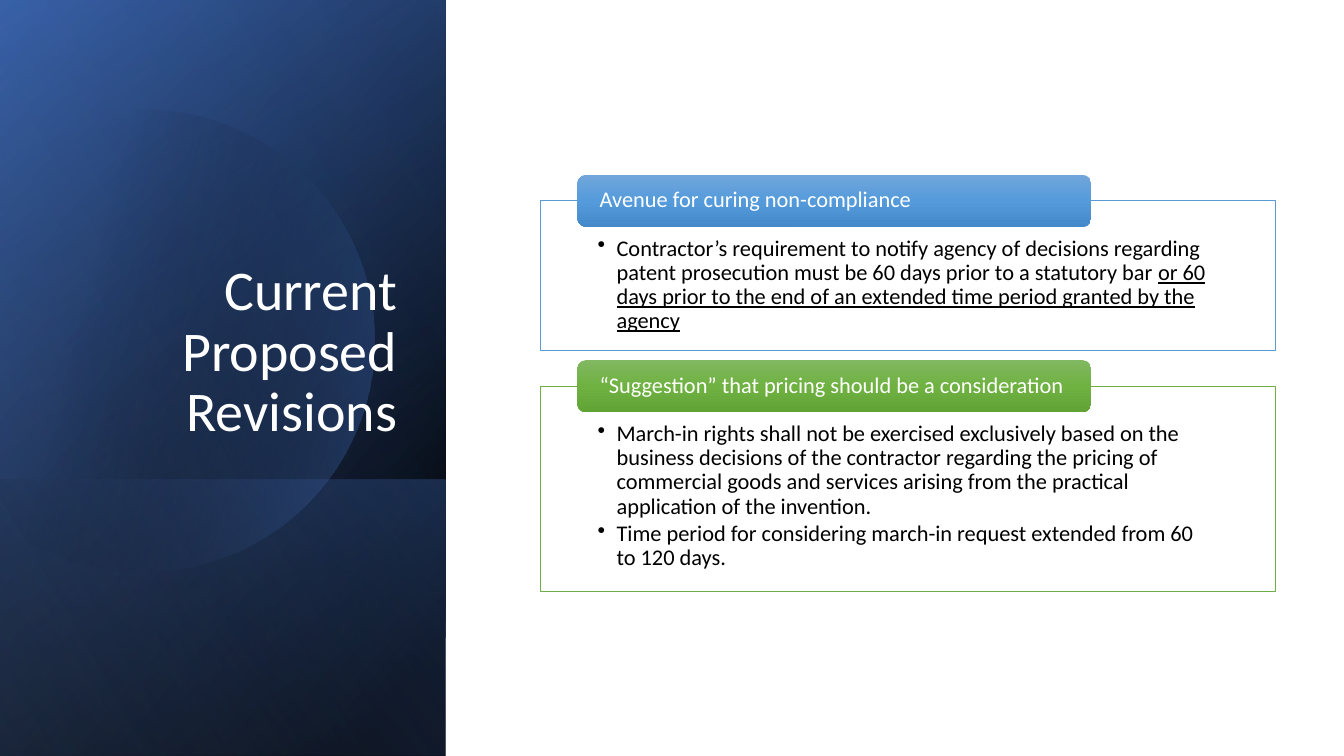
import dataclasses
import math

import pptx
import pptx.dml.color
import pptx.enum.shapes
import pptx.enum.text
import pptx.oxml
import pptx.oxml.ns
import pptx.shapes.autoshape
import pptx.slide
import pptx.text.text
import pptx.util

Cm = pptx.util.Cm
Pt = pptx.util.Pt
SHAPES = pptx.enum.shapes.MSO_SHAPE
ANCHORS = pptx.enum.text.MSO_ANCHOR

FONT = "Calibri"
COLORS = {
    "white": "FFFFFF",
    "black": "000000",
    "navy": "2F5597",
    "royal": "4472C4",
    "pale": "8FAADC",
    "blue": "5B9BD5",
    "green": "70AD47",
    "blue_top": "71A6DB",
    "blue_middle": "559BDB",
    "blue_bottom": "448ACA",
    "green_top": "81B861",
    "green_middle": "6FB242",
    "green_bottom": "62A336",
}


@dataclasses.dataclass(frozen=True)
class Stop:
    position: int
    color: str
    opacity: int = 100


@dataclasses.dataclass(frozen=True)
class Layer:
    top: float
    height: float
    angle: int
    stops: tuple[Stop, ...]


@dataclasses.dataclass(frozen=True)
class Span:
    text: str
    underlined: bool = False


@dataclasses.dataclass(frozen=True)
class Card:
    top: float
    height: float
    color: str
    heading: str
    points: tuple[tuple[Span, ...], ...]


SLIDE_WIDTH, SLIDE_HEIGHT = 33.87, 19.05
PANEL_WIDTH = 11.23
LOWER_HEIGHT = 6.96
LOWER_TOP = SLIDE_HEIGHT - LOWER_HEIGHT
CIRCLE_X, CIRCLE_Y, CIRCLE_RADIUS, CIRCLE_CUT = 3.61, 8.58, 5.82, -0.38
CARD_LEFT, CARD_WIDTH = 13.61, 18.52
HEADING_LEFT, HEADING_WIDTH, HEADING_HEIGHT = 14.55, 12.95, 1.31

BACK_LAYERS = (
    Layer(0, SLIDE_HEIGHT, 50, (Stop(8, "black"), Stop(100, "navy"))),
    Layer(0, SLIDE_HEIGHT, 30, (Stop(0, "black", 0), Stop(99, "royal", 46))),
    Layer(LOWER_TOP, LOWER_HEIGHT, 130, (Stop(2, "royal", 29), Stop(100, "black", 30))),
)
CIRCLE_STOPS = (Stop(29, "black", 0), Stop(100, "royal", 43))
FRONT_LAYER = Layer(0, SLIDE_HEIGHT, 120, (Stop(0, "black", 0), Stop(99, "pale", 11)))

CARDS = (
    Card(5.06, 3.78, "blue", "Avenue for curing non-compliance", (
        (
            Span("Contractor’s requirement to notify agency of decisions regarding patent "
                 "prosecution must be 60 days prior to a statutory bar "),
            Span("or 60 days prior to the end of an extended time period granted by the agency", True),
        ),
    )),
    Card(9.73, 5.18, "green", "“Suggestion” that pricing should be a consideration", (
        (Span("March-in rights shall not be exercised exclusively based on the business decisions "
              "of the contractor regarding the pricing of commercial goods and services arising "
              "from the practical application of the invention."),),
        (Span("Time period for considering march-in request extended from 60 to 120 days."),),
    )),
)


def rgb(name: str) -> pptx.dml.color.RGBColor:
    return pptx.dml.color.RGBColor.from_string(COLORS[name])


def paint_gradient(shape: pptx.shapes.autoshape.Shape, stops: tuple[Stop, ...], angle: int) -> None:
    shape.shadow.inherit = False
    shape.line.fill.background()
    shape.fill.background()
    stop_xml = "".join(
        f'<a:gs pos="{stop.position * 1000}"><a:srgbClr val="{COLORS[stop.color]}">'
        f'<a:alpha val="{stop.opacity * 1000}"/></a:srgbClr></a:gs>'
        for stop in stops
    )
    gradient = pptx.oxml.parse_xml(
        f'<a:gradFill {pptx.oxml.ns.nsdecls("a")} rotWithShape="1"><a:gsLst>{stop_xml}</a:gsLst>'
        f'<a:lin ang="{angle * 60000}" scaled="0"/></a:gradFill>'
    )
    properties = shape._element.spPr
    properties.replace(properties.find(pptx.oxml.ns.qn("a:noFill")), gradient)


def draw_layer(page: pptx.slide.Slide, layer: Layer) -> None:
    shift = (PANEL_WIDTH - layer.height) / 2
    shape = page.shapes.add_shape(
        SHAPES.RECTANGLE, Cm(shift), Cm(layer.top - shift), Cm(layer.height), Cm(PANEL_WIDTH))
    shape.rotation = 90
    shape._element.spPr.xfrm.set("flipH", "1")
    paint_gradient(shape, layer.stops, layer.angle)


def draw_circle(page: pptx.slide.Slide) -> None:
    reach = math.acos((CIRCLE_CUT - CIRCLE_X) / CIRCLE_RADIUS)
    steps = 120
    angles = [reach * (2 * step / steps - 1) for step in range(steps + 1)]
    points = [
        (Cm(CIRCLE_X + CIRCLE_RADIUS * math.cos(angle)), Cm(CIRCLE_Y + CIRCLE_RADIUS * math.sin(angle)))
        for angle in angles
    ]
    builder = page.shapes.build_freeform(*points[0])
    builder.add_line_segments(points[1:], close=True)
    paint_gradient(builder.convert_to_shape(), CIRCLE_STOPS, 14)


def set_frame(frame: pptx.text.text.TextFrame, anchor: ANCHORS, side: float, top: float, bottom: float) -> None:
    frame.word_wrap = True
    frame.vertical_anchor = anchor
    frame.margin_left = frame.margin_right = Cm(side)
    frame.margin_top, frame.margin_bottom = Cm(top), Cm(bottom)


def style_paragraph(para: pptx.text.text._Paragraph, size: int, color: str, right: bool = False) -> None:
    para.alignment = pptx.enum.text.PP_ALIGN.RIGHT if right else pptx.enum.text.PP_ALIGN.LEFT
    para.line_spacing = 0.9
    para.font.name = FONT
    para.font.size = Pt(size)
    para.font.color.rgb = rgb(color)


def add_bullet(para: pptx.text.text._Paragraph) -> None:
    para.level = 1
    para.space_after = Pt(2.4)
    properties = para._p.get_or_add_pPr()
    properties.set("marL", str(Cm(0.48)))
    properties.set("indent", str(-Cm(0.48)))
    properties.append(pptx.oxml.parse_xml(f'<a:buChar {pptx.oxml.ns.nsdecls("a")} char="•"/>'))


def draw_title(page: pptx.slide.Slide) -> None:
    box = page.shapes.add_textbox(Cm(1.12), Cm(4.67), Cm(9.14), Cm(6.65))
    set_frame(box.text_frame, ANCHORS.BOTTOM, 0.25, 0.13, 0.13)
    para = box.text_frame.paragraphs[0]
    para.text = "Current Proposed Revisions"
    style_paragraph(para, 40, "white", right=True)


def draw_card(page: pptx.slide.Slide, card: Card) -> None:
    frame = page.shapes.add_shape(
        SHAPES.RECTANGLE, Cm(CARD_LEFT), Cm(card.top), Cm(CARD_WIDTH), Cm(card.height))
    frame.shadow.inherit = False
    frame.fill.solid()
    frame.fill.fore_color.rgb = rgb("white")
    frame.line.color.rgb = rgb(card.color)
    frame.line.width = Pt(0.5)
    set_frame(frame.text_frame, ANCHORS.TOP, 1.45, 0.91, 0.3)
    for index, spans in enumerate(card.points):
        para = frame.text_frame.add_paragraph() if index else frame.text_frame.paragraphs[0]
        add_bullet(para)
        style_paragraph(para, 16, "black")
        for span in spans:
            run = para.add_run()
            run.text = span.text
            if span.underlined:
                run.font.underline = True

    heading = page.shapes.add_shape(
        SHAPES.ROUNDED_RECTANGLE, Cm(HEADING_LEFT), Cm(card.top - HEADING_HEIGHT / 2),
        Cm(HEADING_WIDTH), Cm(HEADING_HEIGHT))
    shades = ("top", "middle", "bottom")
    paint_gradient(heading, tuple(
        Stop(50 * index, f"{card.color}_{shade}") for index, shade in enumerate(shades)), 90)
    set_frame(heading.text_frame, ANCHORS.MIDDLE, 0.5, 0, 0)
    para = heading.text_frame.paragraphs[0]
    para.text = card.heading
    style_paragraph(para, 16, "white")


def main() -> None:
    deck = pptx.Presentation()
    deck.slide_width, deck.slide_height = Cm(SLIDE_WIDTH), Cm(SLIDE_HEIGHT)
    page = deck.slides.add_slide(deck.slide_layouts[6])
    for layer in BACK_LAYERS:
        draw_layer(page, layer)
    draw_circle(page)
    draw_layer(page, FRONT_LAYER)
    draw_title(page)
    for card in CARDS:
        draw_card(page, card)
    deck.save("out.pptx")


if __name__ == "__main__":
    main()
